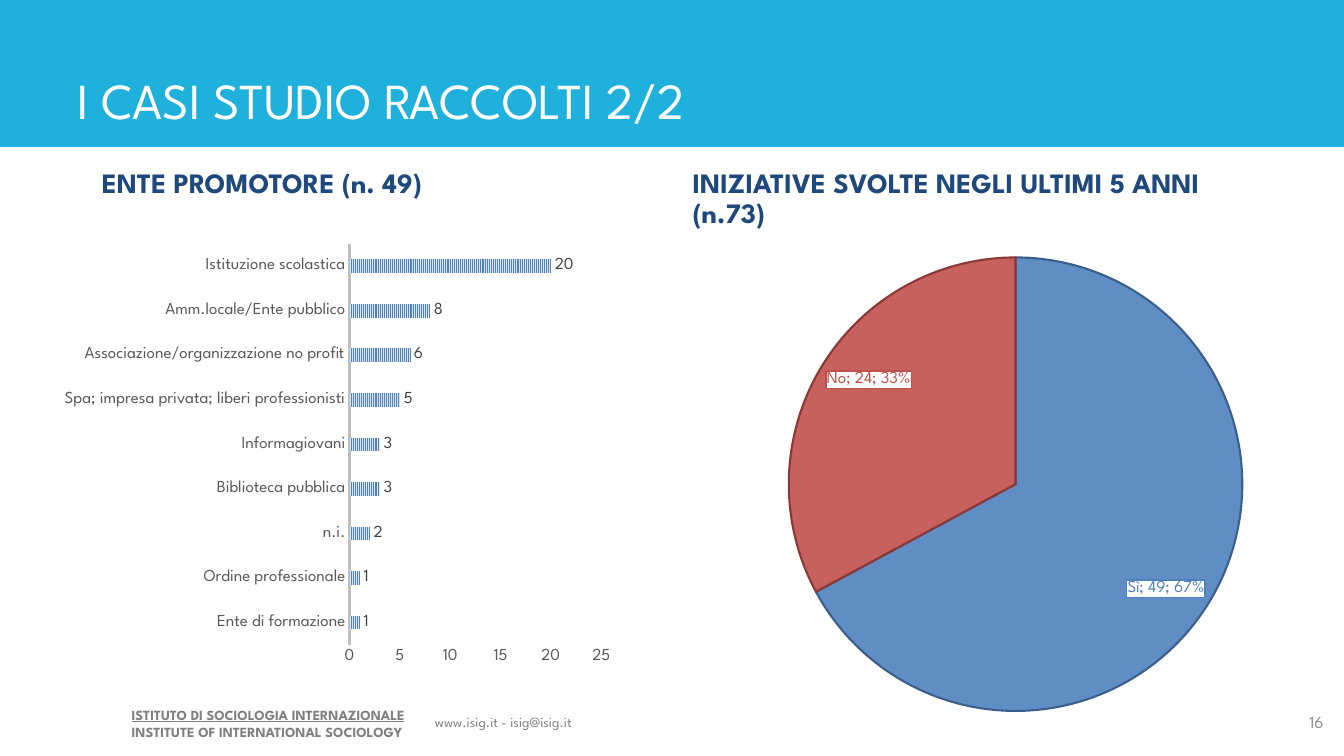
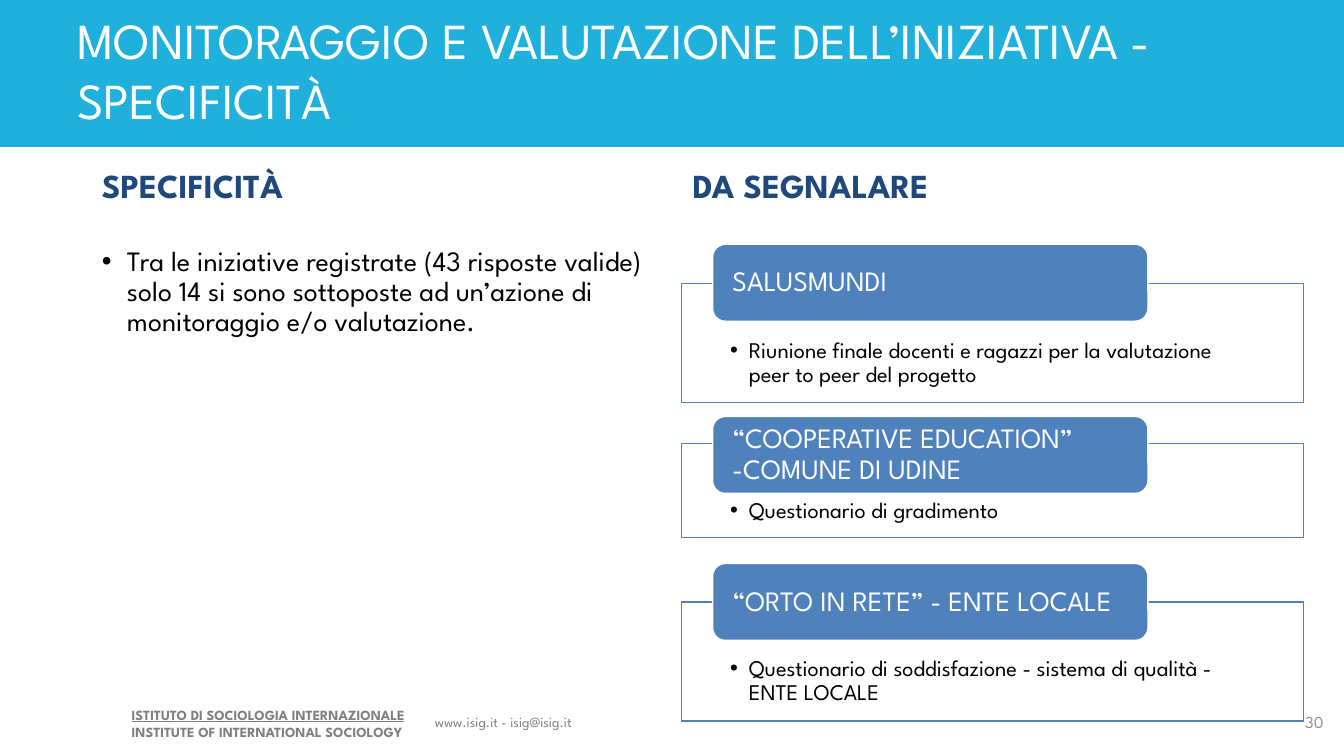
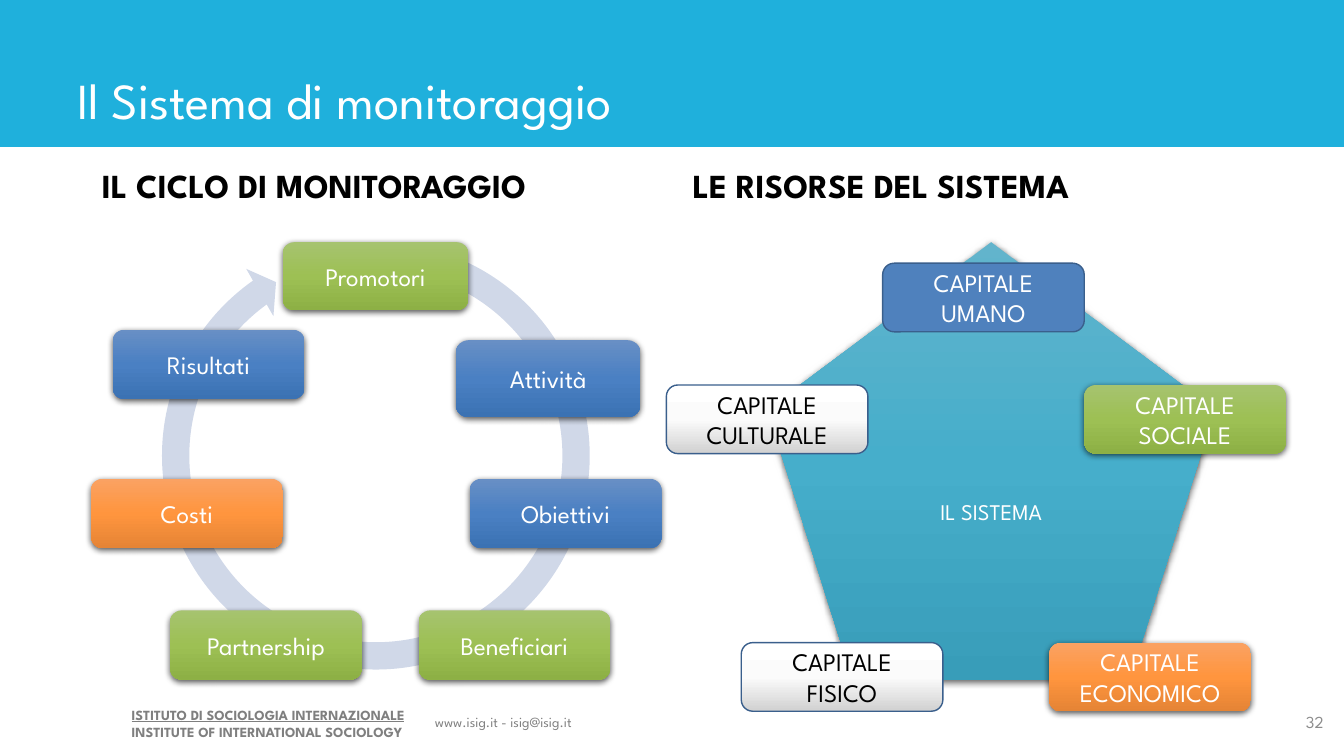
from dataclasses import dataclass, replace
from typing import NamedTuple, Optional

from pptx import Presentation
from pptx.chart.data import CategoryChartData
from pptx.dml.color import RGBColor
from pptx.enum.chart import XL_CHART_TYPE, XL_LABEL_POSITION, XL_TICK_MARK
from pptx.enum.dml import MSO_PATTERN
from pptx.enum.shapes import MSO_SHAPE
from pptx.enum.text import MSO_ANCHOR, MSO_AUTO_SIZE, PP_ALIGN
from pptx.oxml import parse_xml
from pptx.oxml.ns import nsdecls, qn
from pptx.util import Pt

FONT = "League Spartan"
WHITE, BLACK, SKY, NAVY = "FFFFFF", "000000", "1FB0DC", "1F497D"
BLUE, DARK_BLUE, RED, DARK_RED = "4F81BD", "3A5F8C", "C0504D", "8C3836"

GREEN_STOPS = ("A6C36F", "9DC054", "8DB045")
BLUE_STOPS = ("688FC5", "4A80C3", "3B72B3")
ORANGE_STOPS = ("FAA263", "FF953E", "E58435")
GREY_STOPS = ("FFFFFF", "FBFBFB", "D1D1D1")
TEAL_STOPS = ("62B4CC", "46AECB", "389DB9")


class Box(NamedTuple):
    left: float
    top: float
    width: float
    height: float

    def lengths(self) -> tuple:
        return tuple(Pt(value) for value in self)


@dataclass(frozen=True)
class TextStyle:
    size: float
    color: str = WHITE
    bold: bool = False
    underline: bool = False
    align: PP_ALIGN = PP_ALIGN.LEFT
    spacing: float = 1.0


@dataclass(frozen=True)
class Look:
    stops: tuple
    line: Optional[str] = None
    line_width: float = 1
    shadow: bool = False


@dataclass(frozen=True)
class Node:
    text: str
    box: Box
    look: Look
    color: str = WHITE


@dataclass(frozen=True)
class Card:
    title: str
    text: str
    title_top: float
    top: float
    height: float


TITLE_BOX = Box(48, 0, 890, 96.5)
LEFT_HEADING = Box(65.5, 117.5, 406, 50.5)
LEFT_BODY = Box(65.5, 173, 406, 313)
RIGHT_HEADING = Box(487.5, 117.5, 406, 50.5)
TITLE_STYLE = TextStyle(36)
NUMBER_STYLE = TextStyle(12, "8C8C8C", align=PP_ALIGN.RIGHT)
HEADING_STYLE = TextStyle(24, NAVY, bold=True, spacing=0.9)
NODE_STYLE = TextStyle(18, align=PP_ALIGN.CENTER)

GREEN, AZURE, ORANGE, TEAL = (
    Look(stops, shadow=True) for stops in (GREEN_STOPS, BLUE_STOPS, ORANGE_STOPS, TEAL_STOPS)
)
GREY = Look(GREY_STOPS, DARK_BLUE)
FLAT_BLUE = Look((BLUE,), DARK_BLUE)

PROMOTERS = {
    "Ente di formazione": 1,
    "Ordine professionale": 1,
    "n.i.": 2,
    "Biblioteca pubblica": 3,
    "Informagiovani": 3,
    "Spa; impresa privata; liberi professionisti": 5,
    "Associazione/organizzazione no profit": 6,
    "Amm.locale/Ente pubblico": 8,
    "Istituzione scolastica": 20,
}
CARDS = (
    Card("SALUSMUNDI",
         "Riunione finale docenti e ragazzi per la valutazione peer to peer del progetto",
         174.5, 202.5, 85),
    Card("“COOPERATIVE EDUCATION” -COMUNE DI UDINE", "Questionario di gradimento",
         297.5, 317, 67),
    Card("“ORTO IN RETE” - ENTE LOCALE",
         "Questionario di soddisfazione - sistema di qualità - ENTE LOCALE",
         402.5, 430, 85),
)
CYCLE = (
    Node("Promotori", Box(202, 173, 132.5, 48.5), GREEN),
    Node("Attività", Box(325.5, 243, 132, 55), AZURE),
    Node("Obiettivi", Box(335.5, 342, 137, 49.5), AZURE),
    Node("Beneficiari", Box(299, 436, 137, 49.5), GREEN),
    Node("Partnership", Box(121.5, 436, 137, 49.5), GREEN),
    Node("Costi", Box(65, 342, 137, 49.5), ORANGE),
    Node("Risultati", Box(80.5, 235.5, 137, 49.5), AZURE),
)
RESOURCES = (
    Node("CAPITALE UMANO", Box(630.5, 188, 144, 49), FLAT_BLUE),
    Node("CAPITALE SOCIALE", Box(774.5, 275, 144, 49), GREEN),
    Node("CAPITALE ECONOMICO", Box(749.5, 459, 144, 49), ORANGE),
    Node("CAPITALE FISICO", Box(529.5, 459, 144, 49), GREY, BLACK),
    Node("CAPITALE CULTURALE", Box(476, 275, 144, 49), GREY, BLACK),
)


def color(value: str) -> RGBColor:
    return RGBColor.from_string(value)


def set_font(font, size: float, value: str) -> None:
    font.name, font.size = FONT, Pt(size)
    font.color.rgb = color(value)


def write(paragraph, text: str, style: TextStyle) -> None:
    paragraph.alignment = style.align
    paragraph.line_spacing = style.spacing
    paragraph.space_before = Pt(0)
    run = paragraph.add_run()
    run.text = text
    set_font(run.font, style.size, style.color)
    run.font.bold, run.font.underline = style.bold, style.underline


def add_bullet(paragraph, indent: float) -> None:
    properties = paragraph._p.get_or_add_pPr()
    properties.set("marL", str(Pt(indent)))
    properties.set("indent", str(-Pt(indent)))
    properties.append(parse_xml(f'<a:buFont {nsdecls("a")} typeface="Arial"/>'))
    properties.append(parse_xml(f'<a:buChar {nsdecls("a")} char="•"/>'))


def set_margins(frame, left: float, top: float, right: float, bottom: float) -> None:
    frame.margin_left, frame.margin_top = Pt(left), Pt(top)
    frame.margin_right, frame.margin_bottom = Pt(right), Pt(bottom)


def add_text(slide, box: Box, lines: tuple, anchor=MSO_ANCHOR.TOP):
    shape = slide.shapes.add_textbox(*box.lengths())
    frame = shape.text_frame
    frame.word_wrap, frame.vertical_anchor = True, anchor
    for index, (text, style) in enumerate(lines):
        write(frame.add_paragraph() if index else frame.paragraphs[0], text, style)
    return shape


def add_shape(slide, preset: MSO_SHAPE, box: Box, look: Look):
    shape = slide.shapes.add_shape(preset, *box.lengths())
    shape.shadow.inherit = False
    shape.fill.solid()
    shape.fill.fore_color.rgb = color(look.stops[0])
    properties = shape.element.spPr
    if len(look.stops) > 1:
        stops = "".join(
            f'<a:gs pos="{index * 50000}"><a:srgbClr val="{stop}"/></a:gs>'
            for index, stop in enumerate(look.stops))
        properties.replace(properties.find(qn("a:solidFill")), parse_xml(
            f'<a:gradFill {nsdecls("a")} rotWithShape="1"><a:gsLst>{stops}</a:gsLst>'
            '<a:lin ang="5400000" scaled="0"/></a:gradFill>'))
    if look.line:
        shape.line.color.rgb = color(look.line)
        shape.line.width = Pt(look.line_width)
    else:
        shape.line.fill.background()
    if look.shadow:
        properties.find(qn("a:effectLst")).append(parse_xml(
            f'<a:outerShdw {nsdecls("a")} blurRad="{Pt(4.5)}" dist="{Pt(1.5)}" '
            'dir="5400000" rotWithShape="0"><a:srgbClr val="000000">'
            '<a:alpha val="63000"/></a:srgbClr></a:outerShdw>'))
    shape.text_frame.word_wrap = True
    shape.text_frame.vertical_anchor = MSO_ANCHOR.MIDDLE
    return shape


def add_node(slide, node: Node) -> None:
    shape = add_shape(slide, MSO_SHAPE.ROUNDED_RECTANGLE, node.box, node.look)
    write(shape.text_frame.paragraphs[0], node.text, replace(NODE_STYLE, color=node.color))


def add_card(slide, card: Card) -> None:
    body = add_shape(slide, MSO_SHAPE.RECTANGLE, Box(487, card.top, 444, card.height),
                     Look((WHITE,), BLUE))
    body.text_frame.vertical_anchor = MSO_ANCHOR.TOP
    set_margins(body.text_frame, 34.5, 39.5, 34.5, 8.5)
    paragraph = body.text_frame.paragraphs[0]
    add_bullet(paragraph, 13.5)
    write(paragraph, card.text, TextStyle(16, BLACK, spacing=0.9))
    header = add_shape(slide, MSO_SHAPE.ROUNDED_RECTANGLE, Box(509, card.title_top, 311, 55),
                       Look((BLUE,), WHITE))
    set_margins(header.text_frame, 11.5, 0, 11.5, 0)
    write(header.text_frame.paragraphs[0], card.title, TextStyle(20, spacing=0.9))


def prepare_layout(layout) -> None:
    boxes = {0: TITLE_BOX, 1: LEFT_HEADING, 2: LEFT_BODY, 3: RIGHT_HEADING}
    for placeholder in layout.placeholders:
        index = placeholder.placeholder_format.idx
        if index in boxes:
            (placeholder.left, placeholder.top,
             placeholder.width, placeholder.height) = boxes[index].lengths()
            frame = placeholder.text_frame
            frame.vertical_anchor = MSO_ANCHOR.TOP if index else MSO_ANCHOR.BOTTOM
            frame.auto_size = MSO_AUTO_SIZE.NONE


def add_shared_shapes(slide) -> None:
    institute = TextStyle(10, "7F7F7F", bold=True, underline=True)
    shapes = (
        add_text(slide, Box(87, 501, 217.5, 31.5), (
            ("ISTITUTO DI SOCIOLOGIA INTERNAZIONALE", institute),
            ("INSTITUTE OF INTERNATIONAL SOCIOLOGY", replace(institute, underline=False)))),
        add_text(slide, Box(299, 506, 121, 19.5), (
            ("www.isig.it - isig@isig.it",
             TextStyle(10, "808080", align=PP_ALIGN.CENTER)),)),
        add_shape(slide, MSO_SHAPE.RECTANGLE, Box(0, 0, 960, 105), Look((SKY,))),
    )
    first = slide.slide_layout.shapes[0].element
    for number, shape in enumerate(shapes, start=100):
        shape.element.nvSpPr.cNvPr.set("id", str(number))
        first.addprevious(shape.element)


def add_slide(presentation, layout, title: str, headings: tuple, number: str,
              heading_style: TextStyle, body: str = ""):
    slide = presentation.slides.add_slide(layout)
    texts = {0: (title, TITLE_STYLE), 1: (headings[0], heading_style),
             3: (headings[1], heading_style)}
    if body:
        texts[2] = (body, TextStyle(20, BLACK, spacing=0.9))
    for placeholder in list(slide.placeholders):
        index = placeholder.placeholder_format.idx
        if index not in texts:
            placeholder.element.getparent().remove(placeholder.element)
            continue
        paragraph = placeholder.text_frame.paragraphs[0]
        if index == 2:
            add_bullet(paragraph, 18)
        write(paragraph, *texts[index])
    add_text(slide, Box(918.5, 501, 34, 29), ((number, NUMBER_STYLE),), MSO_ANCHOR.MIDDLE)
    return slide


def add_chart(slide, kind: XL_CHART_TYPE, box: Box, values: dict):
    data = CategoryChartData(number_format="###0")
    data.categories = list(values)
    data.add_series("Series 1", list(values.values()))
    chart = slide.shapes.add_chart(kind, *box.lengths(), data).chart
    chart.has_legend = chart.has_title = False
    set_font(chart.font, 10, BLACK)
    chart.plots[0].vary_by_categories = False
    return chart


def add_promoter_chart(slide) -> None:
    chart = add_chart(slide, XL_CHART_TYPE.BAR_CLUSTERED, Box(38, 168, 406, 313), PROMOTERS)
    plot = chart.plots[0]
    plot.gap_width, plot.overlap = 227, -48
    series = plot.series[0]
    series.invert_if_negative = False
    fill = series.format.fill
    fill.patterned()
    fill.pattern = MSO_PATTERN.NARROW_VERTICAL
    fill.fore_color.rgb, fill.back_color.rgb = color(BLUE), color("DCE6F2")
    labels = series.data_labels
    labels.show_value = True
    labels.position = XL_LABEL_POSITION.OUTSIDE_END
    set_font(labels.font, 12, "404040")
    for axis in (chart.category_axis, chart.value_axis):
        axis.has_major_gridlines = False
        axis.major_tick_mark = axis.minor_tick_mark = XL_TICK_MARK.NONE
        set_font(axis.tick_labels.font, 12, "595959")
    line = chart.category_axis.format.line
    line.color.rgb, line.width = color("BFBFBF"), Pt(1.5)
    chart.value_axis.format.line.fill.background()


def add_initiative_chart(slide) -> None:
    chart = add_chart(slide, XL_CHART_TYPE.PIE, Box(480, 173, 472, 364), {"Sì": 49, "No": 24})
    series = chart.plots[0].series[0]
    labels = series.data_labels
    labels.show_value = labels.show_category_name = labels.show_percentage = True
    labels.position = XL_LABEL_POSITION.INSIDE_END
    colors = ((BLUE, DARK_BLUE), (RED, DARK_RED))
    for index, (fill_color, line_color) in enumerate(colors):
        point = series.points[index]
        point.format.fill.solid()
        point.format.fill.fore_color.rgb = color(fill_color)
        point.format.line.color.rgb = color(line_color)
        point.format.line.width = Pt(1.5)
        set_font(point.data_label.font, 12, fill_color)
        point.data_label.position = XL_LABEL_POSITION.INSIDE_END
    root = chart.element
    for point in root.iter(qn("c:dPt")):
        fill = point.find(qn("c:spPr")).find(qn("a:solidFill"))
        fill[0].append(parse_xml(f'<a:alpha {nsdecls("a")} val="90000"/>'))
    for label, (border, _) in zip(root.iter(qn("c:dLbl")), colors):
        for name in ("c:showCatName", "c:showPercent"):
            label.find(qn(name)).set("val", "1")
        label.append(parse_xml(f'<c:separator {nsdecls("c")}>; </c:separator>'))
        for existing in label.findall(qn("c:spPr")):
            label.remove(existing)
        label.find(qn("c:txPr")).addprevious(parse_xml(
            f'<c:spPr {nsdecls("c", "a")}><a:solidFill><a:srgbClr val="{WHITE}"/></a:solidFill>'
            f'<a:ln w="{Pt(1)}"><a:solidFill><a:srgbClr val="{border}"/></a:solidFill></a:ln>'
            '</c:spPr>'))
    area = next(root.iter(qn("c:plotArea")))
    for existing in area.findall(qn("c:layout")):
        area.remove(existing)
    sizes = "".join(f'<c:{name} val="{value}"/>' for name, value in
                    (("x", 0.15), ("y", 0.03), ("w", 0.74), ("h", 0.89)))
    area.insert(0, parse_xml(
        f'<c:layout {nsdecls("c")}><c:manualLayout><c:layoutTarget val="inner"/>'
        f'<c:xMode val="edge"/><c:yMode val="edge"/>{sizes}</c:manualLayout></c:layout>'))


def add_cycle(slide) -> None:
    arrow = add_shape(slide, MSO_SHAPE.CIRCULAR_ARROW, Box(106, 163, 325, 325),
                      Look(("D0D8E8",)))
    for index, value in enumerate((0.06, 3.31, 140.75, 172.07, 0.06)):
        arrow.adjustments[index] = value
    for node in CYCLE:
        add_node(slide, node)


def add_system(slide) -> None:
    pentagon = add_shape(slide, MSO_SHAPE.REGULAR_PENTAGON, Box(548, 173, 320, 313), TEAL)
    write(pentagon.text_frame.paragraphs[0], "IL SISTEMA",
          TextStyle(16, align=PP_ALIGN.CENTER, spacing=0.9))
    for node in RESOURCES:
        add_node(slide, node)


def main() -> None:
    presentation = Presentation()
    presentation.slide_width, presentation.slide_height = Pt(960), Pt(540)
    layout = presentation.slide_layouts.get_by_name("Comparison")
    prepare_layout(layout)

    cases = add_slide(presentation, layout, "I CASI STUDIO RACCOLTI 2/2",
                      ("ENTE PROMOTORE (n. 49)",
                       "INIZIATIVE SVOLTE NEGLI ULTIMI 5 ANNI (n.73)"),
                      "16", replace(HEADING_STYLE, size=20))
    add_shared_shapes(cases)
    add_initiative_chart(cases)
    add_promoter_chart(cases)

    evaluation = add_slide(
        presentation, layout, "MONITORAGGIO E VALUTAZIONE DELL’INIZIATIVA - SPECIFICITÀ",
        ("SPECIFICITÀ", "DA SEGNALARE"), "30", HEADING_STYLE,
        "Tra le iniziative registrate (43 risposte valide) solo 14 si sono sottoposte "
        "ad un’azione di monitoraggio e/o valutazione.")
    for card in CARDS:
        add_card(evaluation, card)

    monitoring = add_slide(presentation, layout, "Il Sistema di monitoraggio",
                           ("IL CICLO DI MONITORAGGIO", "LE RISORSE DEL SISTEMA"),
                           "32", replace(HEADING_STYLE, color=BLACK))
    add_cycle(monitoring)
    add_system(monitoring)
    presentation.save("out.pptx")


if __name__ == "__main__":
    main()
